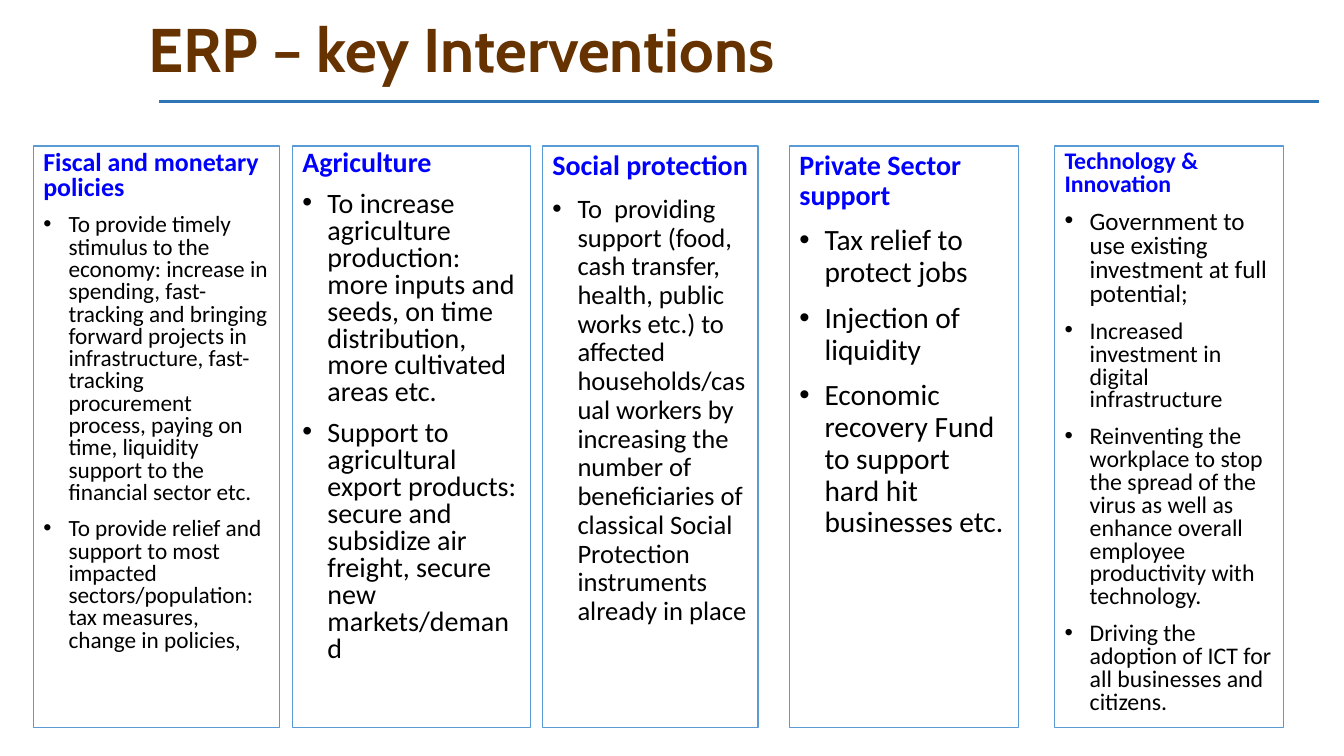
"""Build the slide of key recovery interventions in five columns."""
from dataclasses import dataclass

from lxml.etree import SubElement
from pptx import Presentation
from pptx.dml.color import RGBColor
from pptx.enum.shapes import MSO_CONNECTOR, MSO_SHAPE
from pptx.enum.text import MSO_ANCHOR, MSO_AUTO_SIZE, PP_ALIGN
from pptx.oxml.ns import qn
from pptx.util import Inches, Pt


@dataclass(frozen=True)
class Theme:
    title: str = "663300"
    rule: str = "2E75B6"
    edge: str = "5B9BD5"
    paper: str = "FFFFFF"
    head: str = "0000FF"
    ink: str = "000000"
    title_font: str = "Cabin"
    font: str = "Calibri"
    title_size: float = 44
    gap: float = 10
    rule_width: float = 2.25
    edge_width: float = 1


@dataclass(frozen=True)
class Point:
    text: str
    size: float


@dataclass(frozen=True)
class Column:
    left: float
    width: float
    spacing: float
    head: Point
    points: tuple[Point, ...]


THEME = Theme()
TOP, HEIGHT, INDENT = 1.45, 5.77, 0.25

COLUMNS = (
    Column(0.33, 2.44, 0.8, Point("Fiscal and monetary policies", 18.5), (
        Point("To provide timely stimulus to the economy: increase in spending, "
              "fast-tracking and bringing forward projects in infrastructure, "
              "fast-tracking procurement process, paying on time, liquidity "
              "support to the financial sector etc.", 16.6),
        Point("To provide relief and support to most impacted "
              "sectors/population: tax measures, change in policies,", 16.6))),
    Column(2.9, 2.36, 0.8, Point("Agriculture", 20), (
        Point("To increase agriculture production: more inputs and seeds, "
              "on time distribution, more cultivated areas etc.", 20),
        Point("Support to agricultural export products: secure and subsidize "
              "air freight, secure new markets/demand", 20))),
    Column(5.38, 2.14, 0.9, Point("Social protection", 20), (
        Point("To  providing support (food, cash transfer, health, public works "
              "etc.) to affected households/casual workers by increasing the "
              "number of beneficiaries of classical Social Protection "
              "instruments already in place", 19),)),
    Column(7.83, 2.27, 0.9, Point("Private Sector support", 20), (
        Point("Tax relief to protect jobs", 21),
        Point("Injection of liquidity", 21),
        Point("Economic recovery Fund to support hard hit businesses etc.", 21))),
    Column(10.46, 2.27, 0.8, Point("Technology & Innovation", 17), (
        Point("Government to use existing investment at full potential;", 17.9),
        Point("Increased investment in digital infrastructure", 17),
        Point("Reinventing the workplace to stop the spread of the virus as well "
              "as enhance overall employee productivity with technology.", 17),
        Point("Driving the adoption of ICT for all businesses and citizens.", 17))),
)


def write(para, text: str, *, size: float, color: str, font: str = THEME.font,
          bold: bool = False, bullet: bool = False, spacing: float = 0.9,
          before: float = 0) -> None:
    props = para._p.get_or_add_pPr()
    inset = Inches(INDENT) if bullet else 0
    props.set("marL", str(inset))
    props.set("indent", str(-inset))
    if bullet:
        SubElement(props, qn("a:buFont"), typeface="Arial")
        SubElement(props, qn("a:buChar"), char="•")
    else:
        SubElement(props, qn("a:buNone"))
    para.alignment = PP_ALIGN.LEFT
    para.line_spacing = spacing
    para.space_before = Pt(before)
    para.space_after = Pt(0)
    run = para.add_run()
    run.text = text
    run.font.name = font
    run.font.size = Pt(size)
    run.font.bold = bold
    run.font.color.rgb = RGBColor.from_string(color)


def place(shape, left: float, top: float, width: float, height: float) -> None:
    shape.left, shape.top = Inches(left), Inches(top)
    shape.width, shape.height = Inches(width), Inches(height)


def fit(frame, anchor: MSO_ANCHOR) -> None:
    frame.word_wrap = True
    frame.auto_size = MSO_AUTO_SIZE.NONE
    frame.vertical_anchor = anchor


def draw_title(title) -> None:
    place(title, 1.23, 0.07, 11.5, 0.91)
    frame = title.text_frame
    fit(frame, MSO_ANCHOR.MIDDLE)
    frame.margin_left = Inches(0.24)
    write(frame.paragraphs[0], "ERP – key Interventions", size=THEME.title_size,
          color=THEME.title, font=THEME.title_font, bold=True)


def draw_rule(slide) -> None:
    rule = slide.shapes.add_connector(
        MSO_CONNECTOR.STRAIGHT, Inches(1.58), Inches(1.01), Inches(13.08), Inches(1.01))
    rule.line.color.rgb = RGBColor.from_string(THEME.rule)
    rule.line.width = Pt(THEME.rule_width)
    SubElement(rule._element.spPr, qn("a:effectLst"))


def draw_column(box, column: Column) -> None:
    place(box, column.left, TOP, column.width, HEIGHT)
    box.fill.solid()
    box.fill.fore_color.rgb = RGBColor.from_string(THEME.paper)
    box.line.color.rgb = RGBColor.from_string(THEME.edge)
    box.line.width = Pt(THEME.edge_width)
    frame = box.text_frame
    fit(frame, MSO_ANCHOR.TOP)
    write(frame.paragraphs[0], column.head.text, size=column.head.size,
          color=THEME.head, bold=True, spacing=column.spacing)
    for point in column.points:
        write(frame.add_paragraph(), point.text, size=point.size, color=THEME.ink,
              bullet=True, spacing=column.spacing, before=THEME.gap)


def main() -> None:
    deck = Presentation()
    deck.slide_width, deck.slide_height = Inches(13.33), Inches(7.5)
    slide = deck.slides.add_slide(deck.slide_layouts[1])
    draw_rule(slide)
    draw_title(slide.shapes.title)
    first, *others = COLUMNS
    draw_column(slide.placeholders[1], first)
    for column in others:
        box = slide.shapes.add_shape(MSO_SHAPE.RECTANGLE, 0, 0, 0, 0)
        box.shadow.inherit = False
        draw_column(box, column)
    deck.save("out.pptx")


if __name__ == "__main__":
    main()
